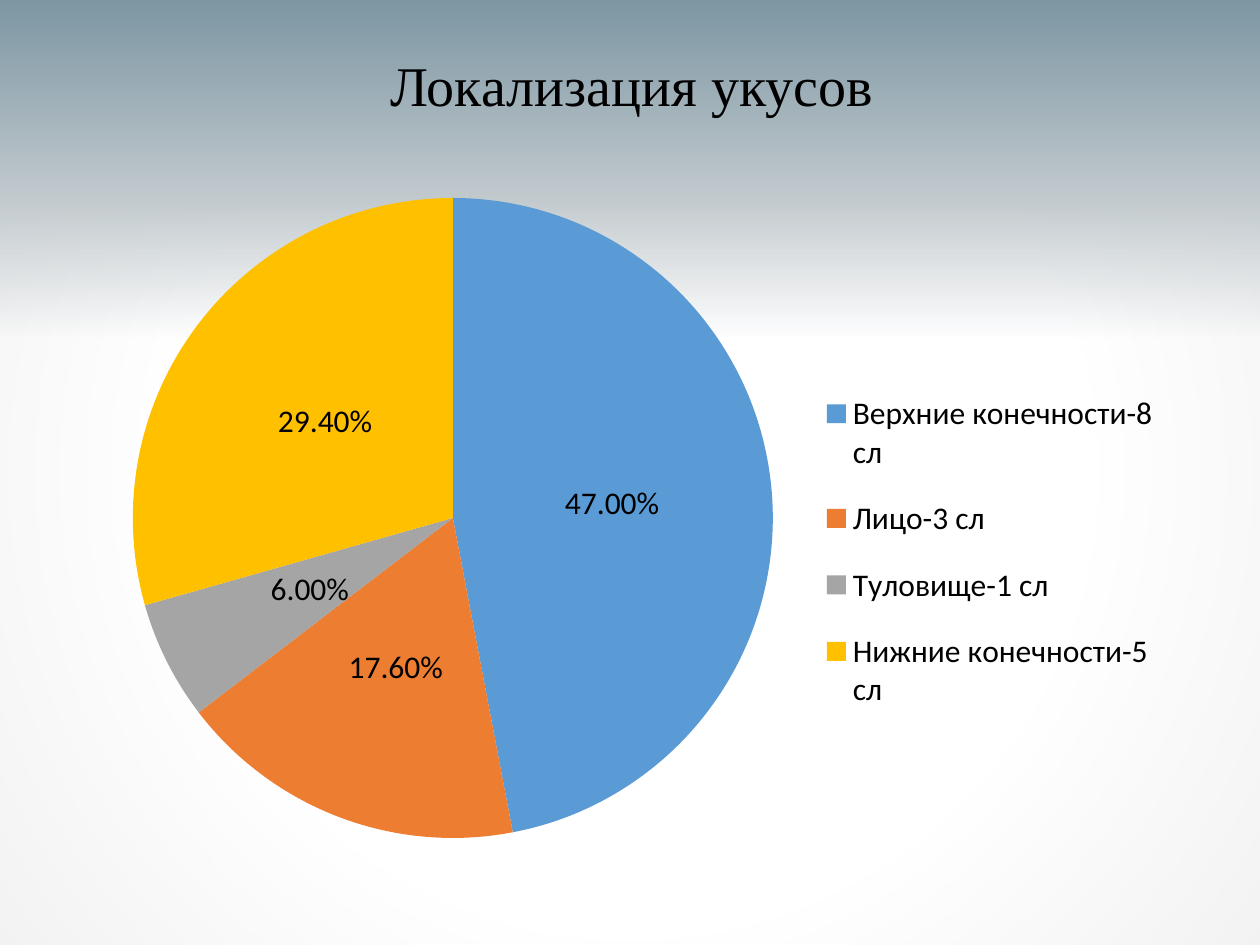
from lxml import etree
from pptx import Presentation
from pptx.chart.data import CategoryChartData
from pptx.dml.color import RGBColor
from pptx.enum import chart as ch, shapes, text
from pptx.oxml import parse_xml
from pptx.oxml.ns import nsdecls, qn
from pptx.util import Inches, Pt

BLACK = RGBColor(0, 0, 0)
WHITE = RGBColor(0xFF, 0xFF, 0xFF)
PALE = RGBColor(0xF2, 0xF2, 0xF2)
SLATE = RGBColor(0x7C, 0x96, 0xA3)
MIST = RGBColor(0xC1, 0xC9, 0xCD)
BLUE = RGBColor(0x5B, 0x9B, 0xD5)
ORANGE = RGBColor(0xED, 0x7D, 0x31)
GREY = RGBColor(0xA5, 0xA5, 0xA5)
GOLD = RGBColor(0xFF, 0xC0, 0x00)

RADIAL = ('<a:path path="circle"><a:fillToRect l="50000" t="50000" '
          'r="50000" b="50000"/></a:path>')
DOWN = '<a:lin ang="5400000" scaled="0"/>'

BITES = [
    ("Верхние конечности-8 сл", 0.47, BLUE),
    ("Лицо-3 сл", 0.176, ORANGE),
    ("Туловище-1 сл", 0.06, GREY),
    ("Нижние конечности-5 сл", 0.294, GOLD),
]


def add_fade(slide, box, stops, way):
    """Lay a gradient panel behind everything placed after it.

    Stops are (percent, colour, opacity percent).
    """
    panel = slide.shapes.add_shape(shapes.MSO_SHAPE.RECTANGLE, *box)
    panel.shadow.inherit = False
    panel.line.fill.background()
    marks = "".join(
        f'<a:gs pos="{pos * 1000}"><a:srgbClr val="{color}">'
        f'<a:alpha val="{alpha * 1000}"/></a:srgbClr></a:gs>'
        for pos, color, alpha in stops)
    fill = parse_xml(f'<a:gradFill {nsdecls("a")} rotWithShape="1">'
                     f'<a:gsLst>{marks}</a:gsLst>{way}</a:gradFill>')
    panel._element.spPr.find(qn("a:prstGeom")).addnext(fill)


def set_title(slide, box, words):
    title = slide.shapes.title
    title.left, title.top, title.width, title.height = box
    frame = title.text_frame
    frame.vertical_anchor = text.MSO_ANCHOR.MIDDLE
    para = frame.paragraphs[0]
    para.alignment = text.PP_ALIGN.CENTER
    para.line_spacing = 0.9
    run = para.add_run()
    run.text = words
    run.font.name = "Times New Roman"
    run.font.size = Pt(32)
    run.font.color.rgb = BLACK
    # The title is drawn above the background panels.
    slide.shapes._spTree.append(title._element)


def set_layout(item, inner=False, **parts):
    """Fix a chart part at fractions x, y, w, h of the chart."""
    layout = item.find(qn("c:layout"))
    if layout is None:
        layout = parse_xml(f'<c:layout {nsdecls("c")}/>')
        before = item.find(qn("c:legendPos"))
        if before is None:
            item.insert(0, layout)
        else:
            before.addnext(layout)
    manual = etree.SubElement(layout, qn("c:manualLayout"))
    pairs = [("layoutTarget", "inner")] if inner else []
    pairs += [("xMode", "edge"), ("yMode", "edge"), *parts.items()]
    for tag, val in pairs:
        etree.SubElement(manual, qn(f"c:{tag}")).set("val", str(val))


def add_pie(slide, box, rows):
    data = CategoryChartData(number_format="0.00%")
    data.categories = [name for name, _, _ in rows]
    data.add_series("Series 1", [val for _, val, _ in rows])
    chart = slide.shapes.add_chart(ch.XL_CHART_TYPE.PIE, *box, data).chart
    chart.has_title = False
    chart.font.name = "Calibri"
    chart.font.size = Pt(18)
    chart.font.color.rgb = BLACK

    chart.has_legend = True
    chart.legend.position = ch.XL_LEGEND_POSITION.RIGHT
    chart.legend.include_in_layout = False
    set_layout(chart.legend._element, x=0.67, y=0.28, w=0.32, h=0.55)

    plot = chart.plots[0]
    plot.vary_by_categories = True
    set_layout(plot._element.getparent(), inner=True,
               x=0.04, y=0.03, w=0.59, h=0.95)
    plot.has_data_labels = True
    labels = plot.data_labels
    labels.show_value = True
    labels.show_percentage = False
    labels.number_format = "0.00%"
    labels.number_format_is_linked = False
    labels.position = ch.XL_LABEL_POSITION.CENTER
    for i, (_, _, color) in enumerate(rows):
        part = plot.series[0].points[i].format
        part.fill.solid()
        part.fill.fore_color.rgb = color
        part.line.fill.background()


def main():
    deck = Presentation()
    deck.slide_width, deck.slide_height = Inches(10), Inches(7.5)
    slide = deck.slides.add_slide(deck.slide_layouts[5])
    slide.background.fill.solid()
    slide.background.fill.fore_color.rgb = WHITE

    add_fade(slide, (0, 0, Inches(10), Inches(7.5)),
             [(0, WHITE, 0), (58, WHITE, 100), (100, PALE, 100)], RADIAL)
    add_fade(slide, (0, 0, Inches(10), Inches(2.67)),
             [(0, SLATE, 100), (58, MIST, 100), (100, MIST, 0)], DOWN)
    left, width = Inches(0.71), Inches(8.61)
    set_title(slide, (left, Inches(0.16), width, Inches(1.09)),
              "Локализация укусов")
    add_pie(slide, (left, Inches(1.41), width, Inches(5.35)), BITES)
    deck.save("out.pptx")


if __name__ == "__main__":
    main()
